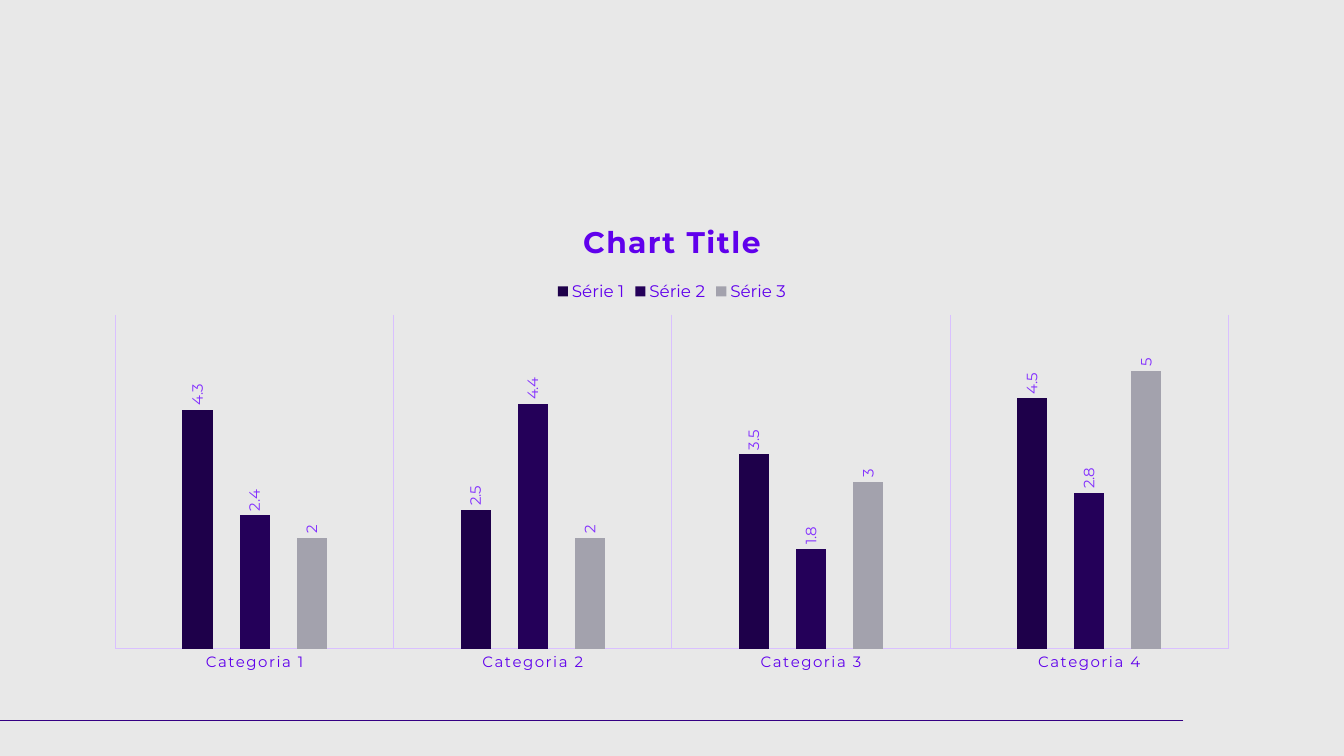
import pptx
import pptx.chart.data
import pptx.dml.color
import pptx.enum.chart
import pptx.enum.shapes
import pptx.oxml
import pptx.oxml.ns
import pptx.util
from pptx.dml.color import RGBColor
from pptx.util import Cm, Pt

CATEGORIES = ["Categoria 1", "Categoria 2", "Categoria 3", "Categoria 4"]
SERIES = [
    ("Série 1", (4.3, 2.5, 3.5, 4.5), RGBColor(0x1E, 0x00, 0x4A)),
    ("Série 2", (2.4, 4.4, 1.8, 2.8), RGBColor(0x24, 0x00, 0x59)),
    ("Série 3", (2, 2, 3, 5), RGBColor(0xA3, 0xA2, 0xAD)),
]
CHART_TITLE = "Chart Title"

FONT = "Montserrat"
TITLE_SIZE = 21.28
LEGEND_SIZE = 11.97
LABEL_SIZE = 10.64
LETTER_SPACING = "120"
BACKGROUND = RGBColor(0xE8, 0xE8, 0xE8)
RULE = RGBColor(0x35, 0x00, 0x83)
TEXT = RGBColor(0x60, 0x00, 0xEC)
LABEL = RGBColor(0x82, 0x2D, 0xFF)
GRID = RGBColor(0xD9, 0xC0, 0xFF)
DARK = RGBColor(0x24, 0x00, 0x59)


def style_font(font, size, color, bold=False):
    font.name = FONT
    font.size = Pt(size)
    font.bold = bold
    font.color.rgb = color


def style_line(line, color, width):
    line.color.rgb = color
    line.width = Pt(width)


def add_rule(page):
    rule = page.shapes.add_connector(
        pptx.enum.shapes.MSO_CONNECTOR.STRAIGHT, Cm(29.82), Cm(18.16), 0, Cm(18.16))
    style_line(rule.line, RULE, 1)
    properties = rule.element.find(pptx.oxml.ns.qn("p:spPr"))
    properties.append(pptx.oxml.parse_xml(
        f"<a:effectLst {pptx.oxml.ns.nsdecls('a')}/>"))


def add_column_chart(page):
    data = pptx.chart.data.CategoryChartData()
    data.categories = CATEGORIES
    for name, values, color in SERIES:
        data.add_series(name, values)
    chart = page.shapes.add_chart(
        pptx.enum.chart.XL_CHART_TYPE.COLUMN_CLUSTERED,
        Cm(2.33), Cm(5.08), Cm(29.21), Cm(12.09), data).chart
    style_font(chart.font, 10, DARK)

    chart.has_title = True
    title = chart.chart_title.text_frame
    title.text = CHART_TITLE
    span = title.paragraphs[0].runs[0]
    style_font(span.font, TITLE_SIZE, TEXT, bold=True)
    chart.chart_title.include_in_layout = False

    chart.has_legend = True
    chart.legend.position = pptx.enum.chart.XL_LEGEND_POSITION.TOP
    chart.legend.include_in_layout = False
    style_font(chart.legend.font, LEGEND_SIZE, TEXT)

    chart.value_axis.visible = False
    chart.value_axis.has_major_gridlines = False

    axis = chart.category_axis
    axis.major_tick_mark = pptx.enum.chart.XL_TICK_MARK.NONE
    axis.has_major_gridlines = True
    style_line(axis.format.line, GRID, 0.75)
    style_line(axis.major_gridlines.format.line, GRID, 0.75)
    style_font(axis.tick_labels.font, LABEL_SIZE, TEXT)

    plot = chart.plots[0]
    plot.gap_width = 444
    plot.overlap = -90
    plot.vary_by_categories = False
    for series, (name, values, color) in zip(plot.series, SERIES):
        series.format.fill.solid()
        series.format.fill.fore_color.rgb = color
        labels = series.data_labels
        labels.show_value = True
        labels.position = pptx.enum.chart.XL_LABEL_POSITION.OUTSIDE_END
        style_font(labels.font, LABEL_SIZE, LABEL)

    for body in chart.element.xpath(".//c:ser/c:dLbls/c:txPr/a:bodyPr"):
        body.set("rot", "-5400000")
        body.set("vert", "horz")
    for properties in chart.element.xpath(
            ".//c:catAx/c:txPr//a:defRPr | .//c:title//a:rPr"):
        properties.set("spc", LETTER_SPACING)


def main():
    deck = pptx.Presentation()
    deck.slide_width, deck.slide_height = Cm(33.87), Cm(19.05)
    page = deck.slides.add_slide(deck.slide_layouts[6])
    page.background.fill.solid()
    page.background.fill.fore_color.rgb = BACKGROUND
    add_rule(page)
    add_column_chart(page)
    deck.save("out.pptx")


if __name__ == "__main__":
    main()
